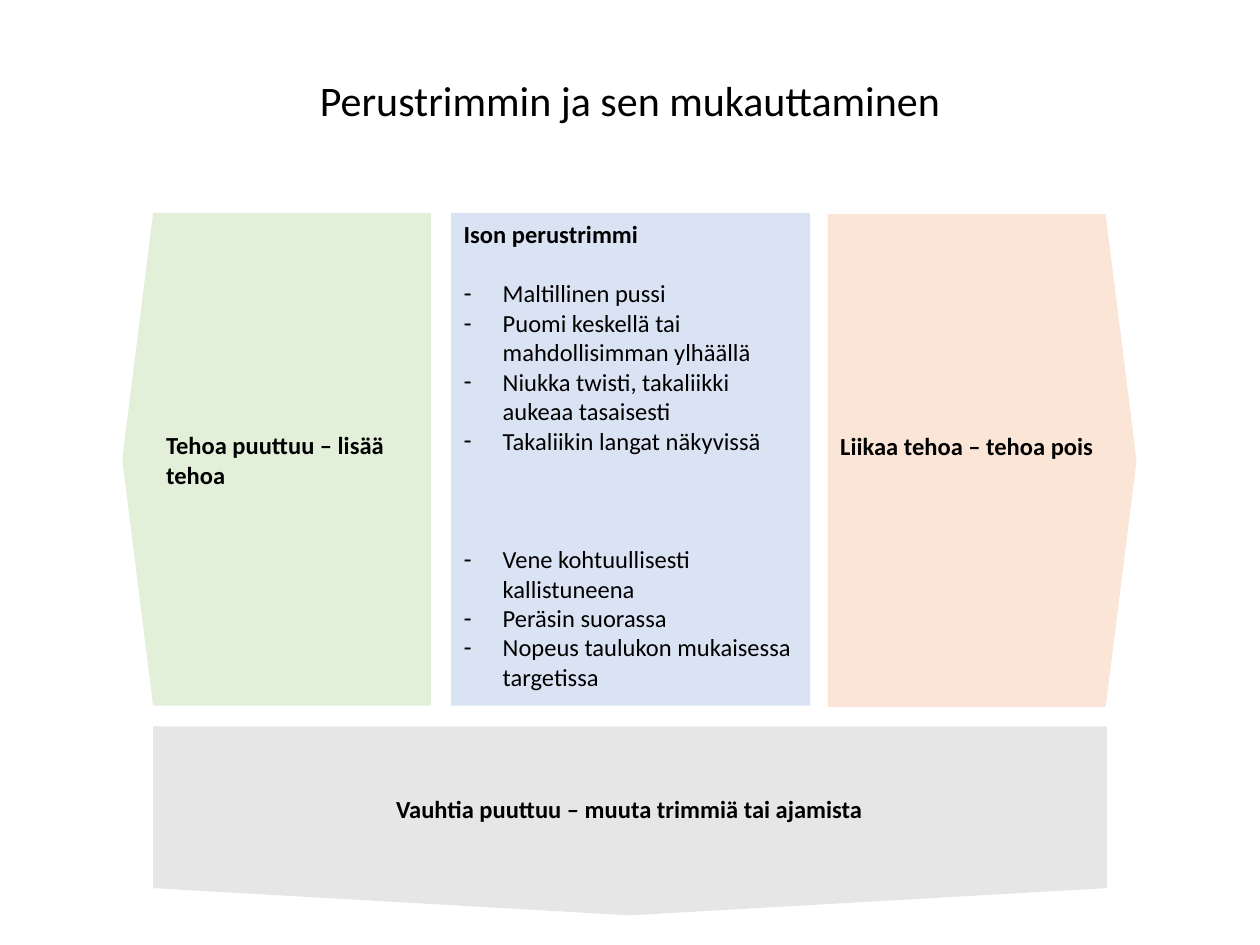
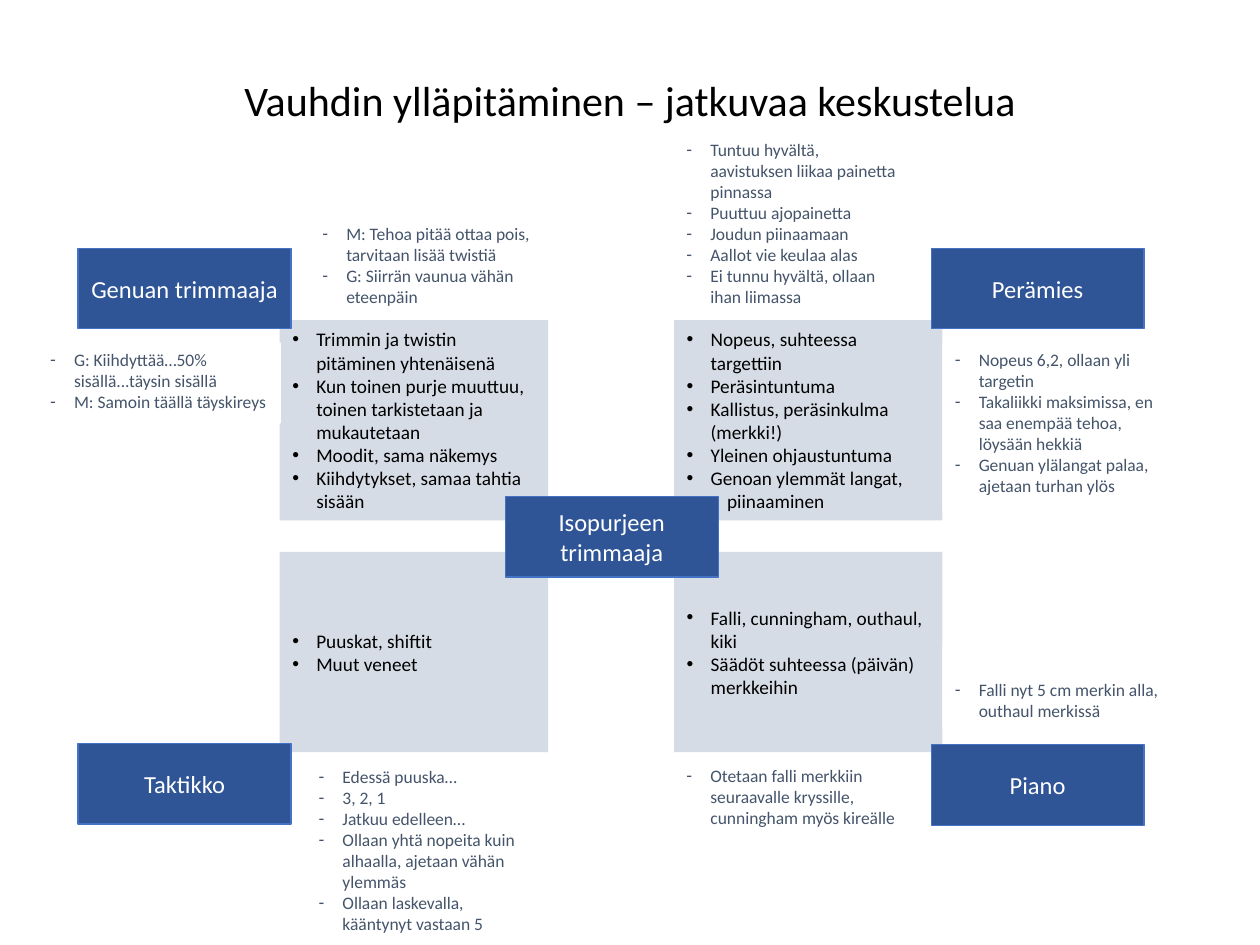
"""Build two slides on sail trim and on keeping up speed."""
import pptx
import pptx.dml.color
import pptx.enum.shapes
import pptx.enum.text
import pptx.oxml.ns
import pptx.util
from lxml import etree

Inches = pptx.util.Inches
Pt = pptx.util.Pt
Shape = pptx.enum.shapes.MSO_SHAPE
Align = pptx.enum.text.PP_ALIGN
Anchor = pptx.enum.text.MSO_ANCHOR

FONT = "Calibri"
BLACK, WHITE, SLATE = "000000", "FFFFFF", "44546A"
NAVY, BLUE, PANEL = "2F5597", "4472C4", "D6DCE5"
GREEN, PEACH, SKY, GRAY = "E2F0D9", "FBE5D6", "DAE3F3", "E7E6E6"


def rgb(code):
    """Turn a hex string into a colour."""
    return pptx.dml.color.RGBColor.from_string(code)


def place(shape, box):
    """Move a shape to left, top, width, height in inches."""
    shape.left, shape.top, shape.width, shape.height = map(Inches, box)


def paint(shape, fill, line=None):
    """Give a shape a flat fill and an optional outline."""
    shape.shadow.inherit = False
    shape.fill.solid()
    shape.fill.fore_color.rgb = rgb(fill)
    if line:
        shape.line.color.rgb = rgb(line)
        shape.line.width = Pt(0.75)
    else:
        shape.line.fill.background()


def bullet(para, mark, margin, hang):
    """Set the bullet sign and the indents of a paragraph."""
    props = para._p.get_or_add_pPr()
    props.set("marL", str(Inches(margin)))
    props.set("indent", str(-Inches(hang)))
    name = pptx.oxml.ns.qn
    if mark:
        etree.SubElement(props, name("a:buFont")).set("typeface", "Arial")
        etree.SubElement(props, name("a:buChar")).set("char", mark)
    else:
        etree.SubElement(props, name("a:buNone"))


def write(shape, *lines, anchor=Anchor.TOP, foot=0.05, **base):
    """Write lines into a shape; a (text, options) pair overrides the format."""
    frame = shape.text_frame
    frame.word_wrap = True
    frame.auto_size = pptx.enum.text.MSO_AUTO_SIZE.NONE
    frame.vertical_anchor = anchor
    frame.margin_left = frame.margin_right = Inches(0.1)
    frame.margin_top, frame.margin_bottom = Inches(0.05), Inches(foot)
    for num, line in enumerate(lines):
        words, extra = (line, {}) if isinstance(line, str) else line
        style = {**base, **extra}
        para = frame.add_paragraph() if num else frame.paragraphs[0]
        margin = style.get("margin", 0)
        mark = style.get("mark")
        bullet(para, mark, margin, margin if mark else 0)
        para.alignment = style.get("align", Align.LEFT)
        para.space_before = Pt(style.get("gap", 0))
        run = para.add_run()
        run.text = words
        run.font.name = FONT
        run.font.size = Pt(style.get("size", 14))
        run.font.bold = style.get("bold", False)
        run.font.color.rgb = rgb(style.get("color", BLACK))


def start(deck, layout, title):
    """Add a slide with its title on top of the other shapes."""
    slide = deck.slides.add_slide(deck.slide_layouts[layout])
    head = slide.shapes.title
    place(head, (0.37, 0.54, 9.26, 0.74))
    write(head, title, size=24, align=Align.CENTER)
    return slide


def arrow(slide, box, fill, turn, point):
    """Add a block arrow turned by some degrees."""
    shape = slide.shapes.add_shape(Shape.PENTAGON, *map(Inches, box))
    shape.adjustments[0] = point
    shape.rotation = turn
    paint(shape, fill)


def label(slide, box, words, **style):
    """Add a bold text box centred from top to bottom."""
    shape = slide.shapes.add_textbox(*map(Inches, box))
    write(shape, words, bold=True, anchor=Anchor.MIDDLE, **style)


def rect(slide, box, fill, *lines, line=None, **style):
    """Add a filled rectangle with text."""
    shape = slide.shapes.add_shape(Shape.RECTANGLE, *map(Inches, box))
    paint(shape, fill, line)
    write(shape, *lines, **style)


def panel(hold, box, fill, *lines, **style):
    """Turn a body placeholder into a filled list."""
    place(hold, box)
    paint(hold, fill)
    write(hold, *lines, **style)


def note(slide, box, *lines, anchor=Anchor.TOP):
    """Add a white box with a small dashed list."""
    rect(slide, box, WHITE, *lines, anchor=anchor, size=10, color=SLATE,
         mark="-", margin=0.19)


def role(slide, left, top, name):
    """Add a navy box that names a crew role."""
    rect(slide, (left, top, 1.69, 0.64), NAVY, name, line=BLUE, color=WHITE,
         align=Align.CENTER, anchor=Anchor.MIDDLE)


def trim(deck):
    """Build the slide on basic trim."""
    slide = start(deck, 1, "Perustrimmin ja sen mukauttaminen")
    arrow(slide, (6.57, 1.7, 2.45, 3.91), PEACH, 0, 0.1)
    panel(slide.placeholders[1], (3.58, 1.69, 2.85, 3.91), SKY,
          ("Ison perustrimmi", {"bold": True, "mark": None, "margin": 0}),
          ("Maltillinen pussi", {"gap": 17}),
          "Puomi keskellä tai mahdollisimman ylhäällä",
          "Niukka twisti, takaliikki aukeaa tasaisesti",
          "Takaliikin langat näkyvissä",
          ("Vene kohtuullisesti kallistuneena", {"gap": 51}),
          "Peräsin suorassa",
          "Nopeus taulukon mukaisessa targetissa",
          mark="-", margin=0.31)
    label(slide, (6.57, 1.69, 2.21, 3.92), "Liikaa tehoa – tehoa pois",
          foot=0.28)
    arrow(slide, (0.97, 1.69, 2.45, 3.91), GREEN, 180, 0.1)
    label(slide, (1.22, 1.7, 2.2, 3.9), "Tehoa puuttuu – lisää tehoa")
    arrow(slide, (4.25, 2.73, 1.5, 7.57), GRAY, 90, 0.144)
    label(slide, (3.04, 5.78, 3.91, 1.28),
          "Vauhtia puuttuu – muuta trimmiä tai ajamista", align=Align.CENTER)


def talk(deck):
    """Build the slide on the talk between crew roles."""
    slide = start(deck, 4, "Vauhdin ylläpitäminen – jatkuvaa keskustelua")
    topics = (
        ("Trimmin ja twistin pitäminen yhtenäisenä",
         "Kun toinen purje muuttuu, toinen tarkistetaan ja mukautetaan",
         "Moodit, sama näkemys",
         "Kiihdytykset, samaa tahtia sisään"),
        ("Nopeus, suhteessa targettiin",
         "Peräsintuntuma",
         "Kallistus, peräsinkulma (merkki!)",
         "Yleinen ohjaustuntuma",
         "Genoan ylemmät langat,",
         ("piinaaminen", {"mark": None, "margin": 0.32})),
        ("Puuskat, shiftit", "Muut veneet"),
        ("Falli, cunningham, outhaul, kiki",
         "Säädöt suhteessa (päivän) merkkeihin"),
    )
    holds = list(slide.placeholders)[1:]
    for num, (hold, lines) in enumerate(zip(holds, topics)):
        row, col = divmod(num, 2)
        panel(hold, (2.22 + 3.13 * col, 2.54 + 1.84 * row, 2.13, 1.59), PANEL,
              *lines, size=11, mark="•", margin=0.19, anchor=Anchor.MIDDLE)

    note(slide, (0.3, 2.72, 1.93, 0.64),
         "G: Kiihdyttää…50% sisällä...täysin sisällä",
         "M: Samoin täällä täyskireys")
    note(slide, (2.46, 1.49, 1.9, 1),
         "M: Tehoa pitää ottaa pois, tarvitaan lisää twistiä",
         "G: Siirrän vaunua vähän eteenpäin", anchor=Anchor.BOTTOM)
    note(slide, (2.43, 6.03, 1.93, 1.47),
         "Edessä puuska…",
         "3, 2, 1",
         "Jatkuu edelleen…",
         "Ollaan yhtä nopeita kuin alhaalla, ajetaan vähän ylemmäs",
         "Ollaan laskevalla, kääntynyt vastaan 5")
    note(slide, (7.48, 5.13, 1.93, 0.64),
         "Falli nyt 5 cm merkin alla, outhaul merkissä", anchor=Anchor.BOTTOM)
    note(slide, (5.35, 6.02, 1.93, 1.23),
         "Otetaan falli merkkiin seuraavalle kryssille, "
         "cunningham myös kireälle")
    note(slide, (7.48, 2.72, 1.93, 1.34),
         "Nopeus 6,2, ollaan yli targetin",
         "Takaliikki maksimissa, en saa enempää tehoa, löysään hekkiä",
         "Genuan ylälangat palaa, ajetaan turhan ylös")
    note(slide, (5.35, 0.79, 1.93, 1.7),
         "Tuntuu hyvältä, aavistuksen liikaa painetta pinnassa",
         "Puuttuu ajopainetta",
         "Joudun piinaamaan",
         "Aallot vie keulaa alas",
         "Ei tunnu hyvältä, ollaan ihan liimassa", anchor=Anchor.BOTTOM)

    role(slide, 4.01, 3.94, "Isopurjeen trimmaaja")
    role(slide, 0.62, 1.97, "Genuan trimmaaja")
    role(slide, 7.39, 1.97, "Perämies")
    role(slide, 7.39, 5.91, "Piano")
    role(slide, 0.62, 5.9, "Taktikko")

    head = slide.shapes.title.element
    head.getparent().append(head)


def main():
    """Build and save the deck."""
    deck = pptx.Presentation()
    deck.slide_width, deck.slide_height = Inches(10), Inches(7.5)
    trim(deck)
    talk(deck)
    deck.save("out.pptx")


if __name__ == "__main__":
    main()
